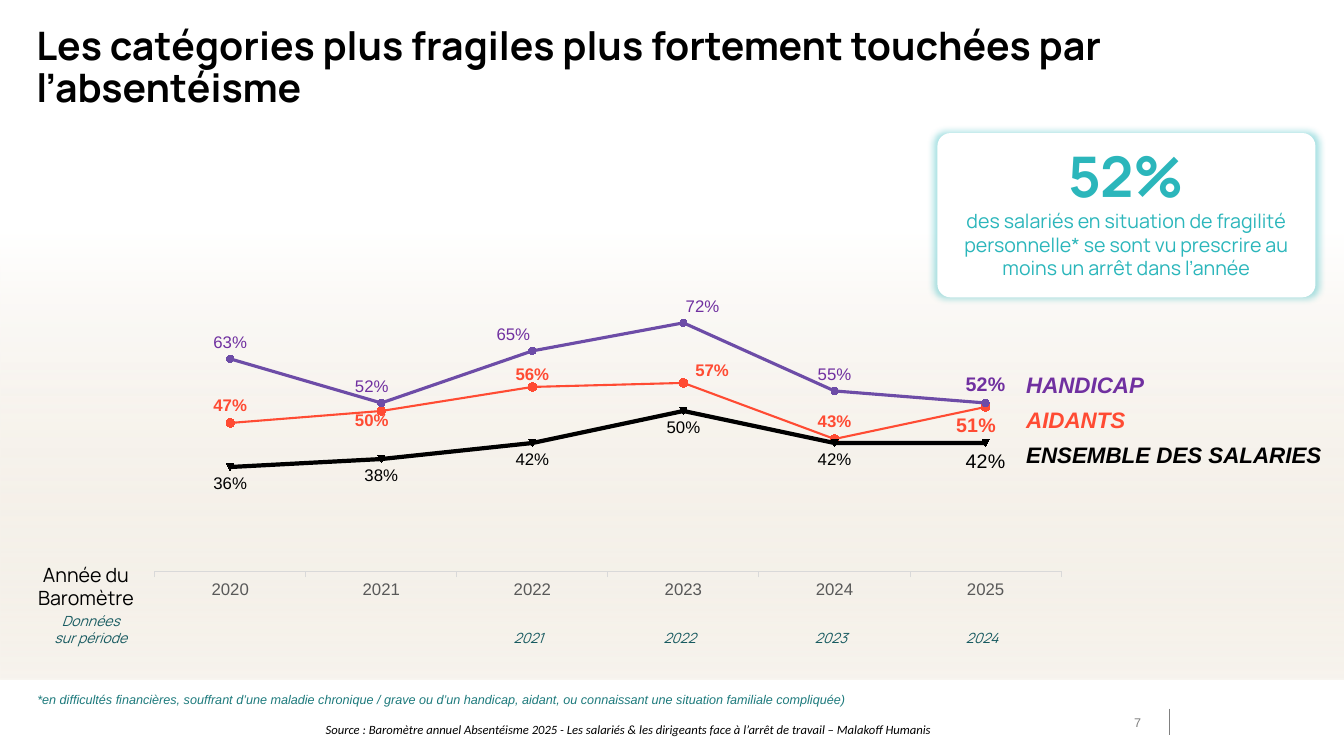
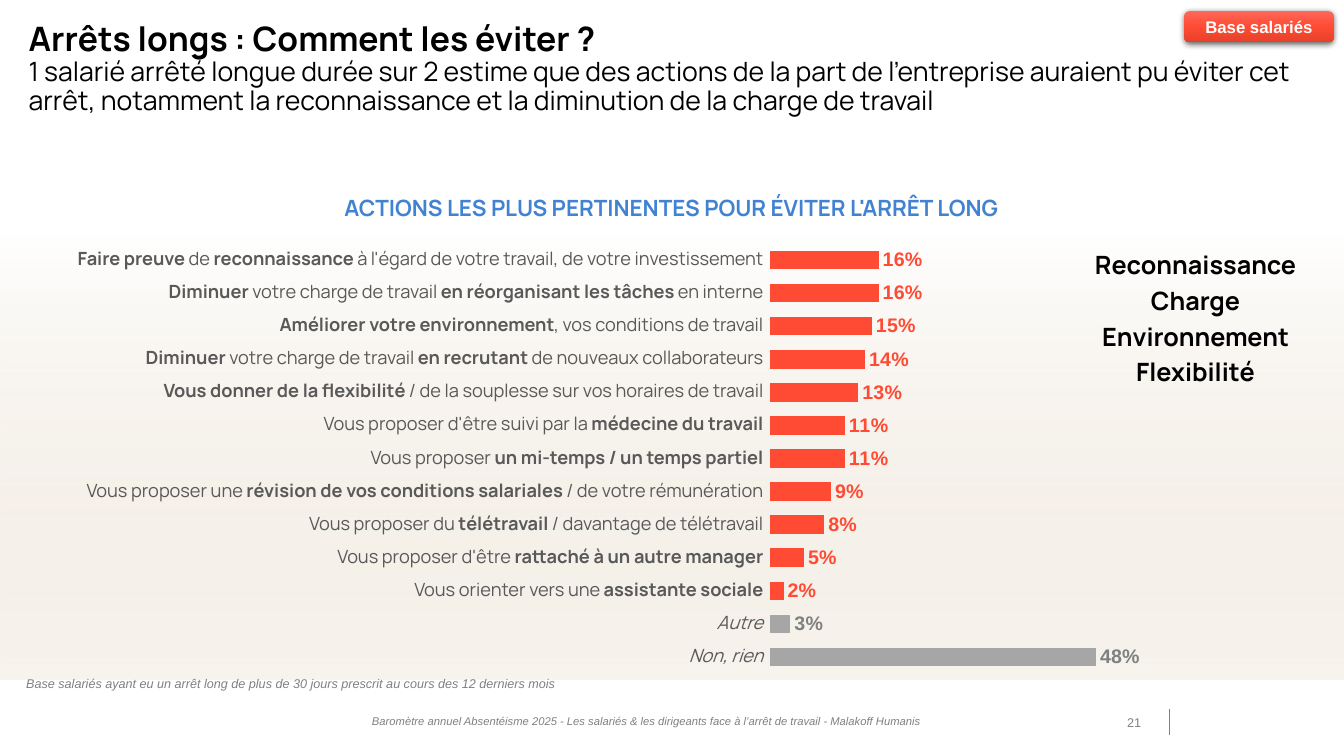
from dataclasses import dataclass, field
from typing import Any, NamedTuple

from lxml import etree
from pptx import Presentation
from pptx import util as u
from pptx.chart.data import CategoryChartData
from pptx.dml.color import RGBColor
from pptx.enum import chart as charts, shapes, text
from pptx.oxml.ns import qn

COLORS = {
    "black": "000000", "white": "FFFFFF", "sand": "E4D8C4", "gray": "808080", "dark gray": "595959",
    "bar gray": "A6A6A6", "rule gray": "D9D9D9", "red": "FF4B33", "light red": "FF685A",
    "deep red": "E5412B", "violet": "6D4CA7", "purple": "7030A0", "turquoise": "2BB6BB",
    "teal": "1D7A7C", "dark teal": "175A60", "blue": "4183D1",
}
WIDTH, HEIGHT = u.Inches(13.33), u.Inches(7.5)
NO_MARGINS = dict.fromkeys(("margin_left", "margin_top", "margin_right", "margin_bottom"), 0)
CENTERED, TO_RIGHT = {"alignment": text.PP_ALIGN.CENTER}, {"alignment": text.PP_ALIGN.RIGHT}
TIGHT = {"line_spacing": 0.9}
LABEL_PLACES = charts.XL_LABEL_POSITION

# Font formats
TITLE = {"name": "Manrope", "size": u.Pt(28), "bold": True, "color": "black"}
SUBTITLE = TITLE | {"size": u.Pt(19), "bold": False}
KEYWORD = TITLE | {"size": u.Pt(18)}
HEADING = TITLE | {"size": u.Pt(16), "color": "blue"}
AXIS_NAME = TITLE | {"size": u.Pt(14), "bold": False}
PERIOD = AXIS_NAME | {"size": u.Pt(10), "italic": True, "color": "dark teal"}
FIGURE = TITLE | {"size": u.Pt(40), "color": "turquoise"}
CAPTION = FIGURE | {"size": u.Pt(14), "bold": False}
ACTION = {"name": "Manrope", "size": u.Pt(13), "color": "dark gray", "bold": False}
SMALL = {"name": "Arial", "size": u.Pt(9), "color": "gray"}
NOTE = SMALL | {"italic": True}
LEGEND = {"name": "Arial", "size": u.Pt(16), "bold": True, "italic": True}
LABEL = {"name": "Arial", "size": u.Pt(12), "bold": False}
LARGE = {"size": u.Pt(14)}

class Box(NamedTuple):
    """Left, top, width and height in percent of the slide."""
    left: float
    top: float
    width: float
    height: float

    def lengths(self) -> tuple[int, ...]:
        return tuple(round(side * share / 100) for side, share in zip((WIDTH, HEIGHT) * 2, self))

@dataclass
class Line:
    """A paragraph; parts between bars are bold."""
    words: str
    font: dict[str, Any]
    layout: dict[str, Any] = field(default_factory=dict)

class PointLabel(NamedTuple):
    """A label moved by shares of the chart."""
    point: int
    right: float = 0
    down: float = 0
    font: dict[str, Any] = {}

@dataclass
class Curve:
    values: list[float]
    color: str
    width: float
    marker: dict[str, Any]
    label_font: dict[str, Any]
    place: Any
    labels: list[PointLabel]

def set_values(target: Any, values: dict[str, Any]) -> None:
    for name, value in values.items():
        if name == "color":
            target.color.rgb = RGBColor.from_string(COLORS[value])
        else:
            setattr(target, name, value)

def set_fill(fill: Any, color: str) -> None:
    fill.solid()
    fill.fore_color.rgb = RGBColor.from_string(COLORS[color])

def add_color(parent: Any, color: str, alpha: int) -> None:
    node = etree.SubElement(parent, qn("a:srgbClr"), val=COLORS[color])
    etree.SubElement(node, qn("a:alpha"), val=str(alpha * 1000))

def write(frame: Any, lines: list[Line], **frame_values: Any) -> None:
    set_values(frame, {"word_wrap": True} | NO_MARGINS | frame_values)
    for index, line in enumerate(lines):
        paragraph = frame.add_paragraph() if index else frame.paragraphs[0]
        set_values(paragraph, line.layout)
        for part, words in enumerate(line.words.split("|")):
            for row, piece in enumerate(words.split("\n")):
                if row:
                    paragraph.add_line_break()
                if piece:
                    run = paragraph.add_run()
                    run.text = piece
                    set_values(run.font, line.font | ({"bold": True} if part % 2 else {}))

def add_text(slide: Any, box: Box, *lines: Line) -> None:
    write(slide.shapes.add_textbox(*box.lengths()).text_frame, list(lines))

def add_plain_shape(slide: Any, kind: Any, box: Box, fill: str) -> Any:
    shape = slide.shapes.add_shape(kind, *box.lengths())
    shape.shadow.inherit = False
    set_fill(shape.fill, fill)
    shape.line.fill.background()
    return shape

def set_gradient(shape: Any, angle: int, stops: list[tuple[int, str, int]]) -> None:
    shape.fill.gradient()
    shape.fill.gradient_angle = angle
    stop_list = shape.element.find(".//" + qn("a:gsLst"))
    for stop in list(stop_list):
        stop_list.remove(stop)
    for position, color, alpha in stops:
        add_color(etree.SubElement(stop_list, qn("a:gs"), pos=str(position * 1000)), color, alpha)

def set_shadow(shape: Any, color: str, alpha: int, blur: float, distance: float, scale: int) -> None:
    shadow = etree.SubElement(
        shape.element.spPr.find(qn("a:effectLst")), qn("a:outerShdw"), blurRad=str(u.Pt(blur)),
        dist=str(u.Pt(distance)), dir="5400000", sx=str(scale * 1000), sy=str(scale * 1000),
        algn="ctr", rotWithShape="0")
    add_color(shadow, color, alpha)

def add_slide(presentation: Any, number: int) -> Any:
    """Blank slide with the shared band, footer rule and page number."""
    slide = presentation.slides.add_slide(presentation.slide_layouts[6])
    band = add_plain_shape(slide, shapes.MSO_SHAPE.RECTANGLE, Box(0, 0, 100, 89.87), "white")
    set_gradient(band, 90, [(0, "sand", 30), (66, "white", 100)])
    left, top, _, height = Box(87, 93.75, 0, 3.45).lengths()
    rule = slide.shapes.add_connector(shapes.MSO_CONNECTOR.STRAIGHT, left, top, left, top + height)
    set_values(rule.line, {"color": "gray", "width": u.Pt(1)})
    etree.SubElement(rule.element.spPr, qn("a:effectLst"))
    add_text(slide, Box(82.65, 94.53, 2.25, 2), Line(str(number), SMALL, TO_RIGHT))
    return slide

def manual_layout(**values: Any) -> Any:
    layout = etree.Element(qn("c:layout"))
    manual = etree.SubElement(layout, qn("c:manualLayout"))
    for name, value in values.items():
        etree.SubElement(manual, qn("c:" + name), val=str(value))
    return layout

def add_chart(slide: Any, kind: Any, box: Box, categories: list[str], series: dict[str, list[float]],
              limits: tuple[float, float], plot: tuple[float, ...]) -> Any:
    data = CategoryChartData(number_format="0%")
    data.categories = categories
    for name, values in series.items():
        data.add_series(name, values)
    chart = slide.shapes.add_chart(kind, *box.lengths(), data).chart
    set_values(chart, {"has_legend": False, "has_title": False})
    set_values(chart.font, {"name": "Arial", "size": u.Pt(10), "color": "black"})
    chart.plots[0].vary_by_categories = False
    set_values(chart.value_axis, {"visible": False, "has_major_gridlines": False,
                                  "minimum_scale": limits[0], "maximum_scale": limits[1]})
    area = chart.element.find(".//" + qn("c:plotArea"))
    for old in area.findall(qn("c:layout")):
        area.remove(old)
    area.insert(0, manual_layout(layoutTarget="inner", xMode="edge", yMode="edge", **dict(zip("xywh", plot))))
    return chart

def label_series(series: Any, font: dict[str, Any], place: Any) -> None:
    set_values(series.data_labels, {"show_value": True, "position": place,
                                    "number_format": "0%", "number_format_is_linked": False})
    set_values(series.data_labels.font, font)

def add_curves(slide: Any, curves: dict[str, Curve]) -> None:
    chart = add_chart(slide, charts.XL_CHART_TYPE.LINE_MARKERS, Box(9.38, 18.8, 71, 71.87),
                      [str(year) for year in range(2020, 2026)],
                      {name: curve.values for name, curve in curves.items()},
                      (0.1, 0.9), (0.03, 0.2, 0.95, 0.59))
    axis = chart.category_axis
    axis.major_tick_mark = charts.XL_TICK_MARK.OUTSIDE
    set_values(axis.tick_labels.font, LABEL | {"color": "dark gray"})
    set_values(axis.format.line, {"color": "rule gray", "width": u.Pt(0.75)})
    for order, (curve, series) in enumerate(zip(curves.values(), chart.plots[0].series), 1):
        series.smooth = False
        set_values(series.format.line, {"color": curve.color, "width": u.Pt(curve.width)})
        set_values(series.marker, curve.marker)
        set_fill(series.marker.format.fill, curve.color)
        set_values(series.marker.format.line, {"color": curve.color})
        label_series(series, curve.label_font, curve.place)
        for moved in curve.labels:
            label = series.points[moved.point].data_label
            set_values(label.font, curve.label_font | moved.font)
            label.position = curve.place
            if moved.right or moved.down:
                node = chart.element.xpath(f'.//c:ser[{order}]//c:dLbl[c:idx/@val="{moved.point}"]')[0]
                node.insert(1, manual_layout(x=moved.right, y=moved.down))
    # Moved labels need no leader lines
    for leader in chart.element.iter(qn("c:showLeaderLines")):
        leader.set("val", "0")

def build_trend_slide(presentation: Any) -> None:
    slide = add_slide(presentation, 7)
    add_text(slide, Box(2.7, 3.47, 95.85, 11.33),
             Line("Les catégories plus fragiles plus fortement touchées par l’absentéisme", TITLE, TIGHT))
    # Curves and their names
    circle = {"style": charts.XL_MARKER_STYLE.CIRCLE}
    add_curves(slide, {
        "Aidants": Curve([0.47, 0.5, 0.56, 0.57, 0.43, 0.51], "red", 1.5, circle | {"size": 6},
                         LABEL | {"bold": True, "color": "red"}, LABEL_PLACES.ABOVE,
                         [PointLabel(1, -0.01, 0.05), PointLabel(2, 0, 0.01),
                          PointLabel(3, 0.03, 0.01), PointLabel(5, -0.01, 0.07, LARGE)]),
        "Handicap": Curve([0.63, 0.52, 0.65, 0.72, 0.55, 0.52], "violet", 2.25, circle | {"size": 5},
                          LABEL | {"color": "purple"}, LABEL_PLACES.ABOVE,
                          [PointLabel(1, -0.01), PointLabel(2, -0.02), PointLabel(3, 0.02),
                           PointLabel(5, font=LARGE | {"bold": True})]),
        "Ensemble": Curve([0.36, 0.38, 0.42, 0.5, 0.42, 0.42], "black", 3, {"size": 5},
                          LABEL | {"color": "black"}, LABEL_PLACES.BELOW, [PointLabel(5, font=LARGE)]),
    })
    names = {"HANDICAP": "purple", "AIDANTS": "red", "ENSEMBLE DES SALARIES": "black"}
    add_text(slide, Box(76.35, 49.07, 23.5, 13.07),
             *(Line(name, LEGEND | {"color": color}, {"space_before": u.Pt(6 if row else 0)})
               for row, (name, color) in enumerate(names.items())))
    # Year rows under the chart
    add_text(slide, Box(0, 74.4, 12.8, 6.27), Line("Année du\nBaromètre", AXIS_NAME, CENTERED))
    add_text(slide, Box(0, 81.07, 13.5, 4.53), Line("Données\nsur période", PERIOD, CENTERED))
    for column in range(4):
        add_text(slide, Box(36.25 + 11.25 * column, 83.33, 6.15, 2.27),
                 Line(str(2021 + column), PERIOD, CENTERED))
    # Key figure card
    card = add_plain_shape(slide, shapes.MSO_SHAPE.ROUNDED_RECTANGLE, Box(69.75, 17.6, 28.13, 21.73), "white")
    card.adjustments[0] = 0.08
    set_shadow(card, "turquoise", 40, 5, 0, 102)
    caption = ("des salariés en situation de fragilité personnelle* se sont vu prescrire "
               "au moins un arrêt dans l’année")
    write(card.text_frame, [Line("52%", FIGURE, CENTERED), Line(caption, CAPTION, CENTERED)],
          vertical_anchor=text.MSO_ANCHOR.TOP, margin_top=u.Inches(0.05),
          margin_left=u.Inches(0.1), margin_right=u.Inches(0.1))
    # Notes
    add_text(slide, Box(2.78, 91.47, 73.95, 2), Line(
        "*en difficultés financières, souffrant d’une maladie chronique / grave ou d’un handicap, "
        "aidant, ou connaissant une situation familiale compliquée)", NOTE | {"color": "teal"}))
    add_text(slide, Box(24.23, 95.47, 48, 2), Line(
        "Source : Baromètre annuel Absentéisme 2025 - Les salariés & les dirigeants face à l’arrêt "
        "de travail – Malakoff Humanis", NOTE | {"name": "Calibri", "color": "black"}))

ACTIONS = {
    "|Faire preuve |de| reconnaissance| à l'égard de votre travail, de votre investissement": 0.16,
    "|Diminuer |votre charge de travail |en réorganisant les tâches| en interne": 0.16,
    "|Améliorer votre environnement|, vos conditions de travail": 0.15,
    "|Diminuer |votre charge de travail |en recrutant |de nouveaux collaborateurs": 0.14,
    "|Vous donner de la flexibilité |/ de la souplesse sur vos horaires de travail": 0.13,
    "Vous proposer d'être suivi par la |médecine du travail|": 0.11,
    "Vous proposer |un mi-temps / un temps partiel|": 0.11,
    "Vous proposer une |révision de vos conditions salariales |/ de votre rémunération": 0.09,
    "Vous proposer du |télétravail| / davantage de télétravail": 0.08,
    "Vous proposer d'être |rattaché à un autre manager|": 0.05,
    "Vous orienter vers une |assistante sociale|": 0.02,
    "Autre": 0.03,
    "Non, rien": 0.48,
}
OTHER_ANSWERS = range(11, 13)

def add_actions(slide: Any) -> None:
    """Borderless table of answers, with one bar beside each row."""
    table = slide.shapes.add_table(len(ACTIONS), 1, *Box(0, 32, 57, 56.93).lengths()).table
    set_values(table, {"first_row": False, "horz_banding": False})
    for row, answer in enumerate(ACTIONS):
        cell = table.cell(row, 0)
        set_values(cell, NO_MARGINS | {"margin_right": u.Inches(0.03),
                                       "vertical_anchor": text.MSO_ANCHOR.MIDDLE})
        properties = cell.fill and cell.text_frame and table.cell(row, 0)._tc.get_or_add_tcPr()
        for side in ("lnL", "lnR", "lnT", "lnB"):
            etree.SubElement(etree.SubElement(properties, qn("a:" + side), w="0"), qn("a:noFill"))
        cell.fill.background()
        write(cell.text_frame, [Line(answer, ACTION | {"italic": row in OTHER_ANSWERS}, TO_RIGHT)])
    chart = add_chart(slide, charts.XL_CHART_TYPE.BAR_CLUSTERED, Box(57.3, 32.2, 39.9, 56.93),
                      [str(row + 1) for row in range(len(ACTIONS))],
                      {"Actions": list(ACTIONS.values())}, (0, 0.75), (0, 0, 0.95, 1))
    set_values(chart.category_axis, {"visible": False, "reverse_order": True})
    chart.plots[0].gap_width = 77
    series = chart.plots[0].series[0]
    set_fill(series.format.fill, "red")
    font = LABEL | LARGE | {"bold": True, "color": "red"}
    label_series(series, font, LABEL_PLACES.OUTSIDE_END)
    for row in OTHER_ANSWERS:
        point = series.points[row]
        set_fill(point.format.fill, "bar gray")
        set_values(point.data_label.font, font | {"color": "gray"})
        point.data_label.position = LABEL_PLACES.OUTSIDE_END

def build_actions_slide(presentation: Any) -> None:
    slide = add_slide(presentation, 21)
    subtitle = ("1 salarié arrêté longue durée sur 2 estime que des actions de la part de l’entreprise auraient "
                "pu éviter cet arrêt, notamment la reconnaissance et la diminution de la charge de travail")
    add_text(slide, Box(2.13, 3, 94.28, 12), Line("Arrêts longs : Comment les éviter ?",
             TITLE | {"size": u.Pt(24)}, TIGHT), Line(subtitle, SUBTITLE, TIGHT))
    add_text(slide, Box(22.2, 26.4, 55.5, 2.93), Line(
        "ACTIONS LES PLUS PERTINENTES POUR ÉVITER L'ARRÊT LONG", HEADING, CENTERED | {"line_spacing": 0.8}))
    add_actions(slide)
    # Badge and keywords
    badge = add_plain_shape(slide, shapes.MSO_SHAPE.ROUNDED_RECTANGLE, Box(88.13, 1.47, 11.1, 4.13), "red")
    set_gradient(badge, 270, [(0, "light red", 100), (50, "red", 100), (100, "deep red", 100)])
    set_shadow(badge, "black", 63, 4.5, 1.5, 100)
    write(badge.text_frame, [Line("Base salariés", LABEL | {"bold": True, "color": "white"}, CENTERED)],
          vertical_anchor=text.MSO_ANCHOR.MIDDLE)
    add_text(slide, Box(78.68, 33.47, 20.55, 18), *(
        Line(word, KEYWORD, TIGHT | CENTERED | {"space_after": u.Pt(6)})
        for word in ("Reconnaissance", "Charge", "Environnement", "Flexibilité")))
    # Notes
    add_text(slide, Box(1.95, 89.47, 45.83, 2), Line(
        "Base salariés ayant eu un arrêt long de plus de 30 jours prescrit au cours des 12 derniers mois", NOTE))
    add_text(slide, Box(27.68, 94.53, 47.8, 2), Line(
        "Baromètre annuel Absentéisme 2025 - Les salariés & les dirigeants face à l’arrêt de travail "
        "- Malakoff Humanis", NOTE | {"size": u.Pt(8)}))

if __name__ == "__main__":
    presentation = Presentation()
    set_values(presentation, {"slide_width": WIDTH, "slide_height": HEIGHT})
    build_trend_slide(presentation)
    build_actions_slide(presentation)
    presentation.save("out.pptx")
